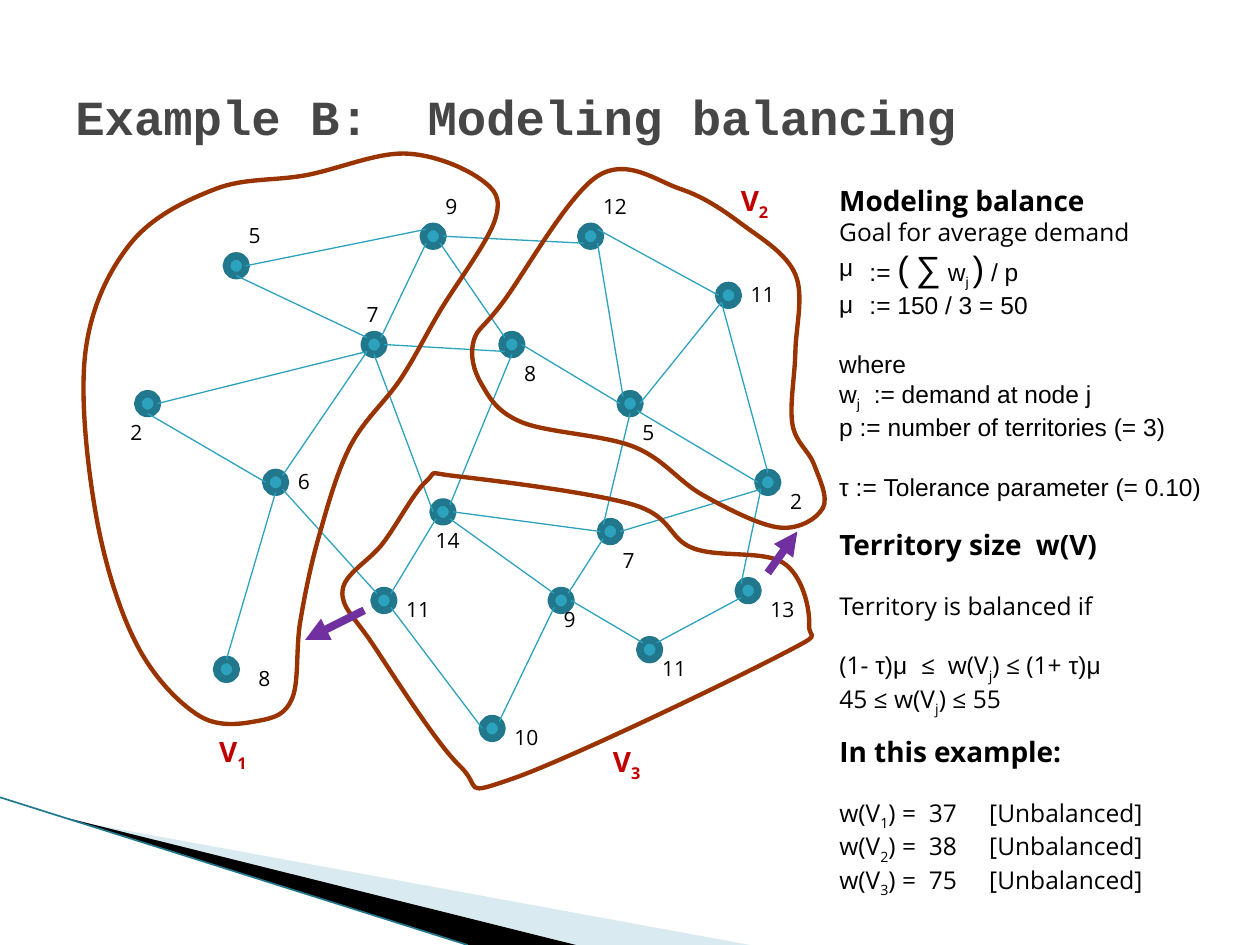
from typing import NamedTuple, Optional, Sequence

import lxml.etree
import pptx
import pptx.dml.color
import pptx.enum.shapes
import pptx.enum.text
import pptx.oxml.ns
import pptx.util

COLUMNS, ROWS = 128, 96
WIDTH, HEIGHT = pptx.util.Inches(10), pptx.util.Inches(7.5)
CELL = WIDTH / COLUMNS
COLORS = {
    "node": "2DA2BF", "ring": "21788D", "region": "993300", "name": "C00000",
    "arrow": "7030A0", "text": "000000", "title": "464646", "wash": "A0CBDC",
}
SANS, ARIAL, MONO = "Open Sans", "Arial", "Courier New"
DIAGONAL = 0.5 ** 0.5
SITES = {
    "N": (0, -1), "S": (0, 1), "W": (-1, 0), "E": (1, 0),
    "NW": (-DIAGONAL, -DIAGONAL), "NE": (DIAGONAL, -DIAGONAL),
    "SW": (-DIAGONAL, DIAGONAL), "SE": (DIAGONAL, DIAGONAL),
}
Point = tuple[float, float]


class Node(NamedTuple):
    center: Point
    demand: int
    label: Point


class Region(NamedTuple):
    number: str
    label: Point
    anchors: Sequence[Point]


class Span(NamedTuple):
    text: str
    font: str = SANS
    size: float = 14
    bold: bool = False
    sub: bool = False


class Para(NamedTuple):
    spans: Sequence[Span]
    before: float = 0
    bullet: str = ""
    tab: float = 0


NODES = {
    "A": Node((24, 27), 5, (24, 22)), "B": Node((15, 41), 2, (12, 42)),
    "C": Node((44, 24), 9, (44, 19)), "D": Node((28, 49), 6, (29, 47)),
    "E": Node((52, 35), 8, (52, 36)), "F": Node((38, 35), 7, (36, 30)),
    "G": Node((64, 41), 5, (64, 42)), "H": Node((39, 61), 11, (40, 60)),
    "I": Node((45, 52), 14, (43, 53)), "J": Node((62, 54), 7, (62, 55)),
    "K": Node((60, 24), 12, (60, 19)), "L": Node((78, 49), 2, (79, 49)),
    "M": Node((57, 61), 9, (56, 61)), "N": Node((76, 60), 13, (77, 60)),
    "O": Node((23, 68), 8, (25, 67)), "P": Node((66, 66), 11, (66, 66)),
    "Q": Node((50, 74), 10, (51, 73)), "R": Node((74, 30), 11, (75, 28)),
}
EDGES = """A.S-F.NW A.E-C.NW B.E-F.SW D.W-B.S O.N-D.S F.NE-C.SW D.NE-F.SW C.E-K.SW
C.SE-E.NW F.E-E.SW F.S-I.W H.NW-D.SE H.SE-Q.W H.NE-I.SW E.E-G.W K.SE-G.NW K.NE-R.W
G.E-R.SW G.S-J.NW I.E-J.W I.SE-M.NW Q.NE-M.SW M.E-P.NW P.NE-N.SW M.NE-J.SW N.NW-L.SW
L.N-R.SW G.SE-L.W J.E-L.SW I.NE-E.S""".split()
REGIONS = [
    Region("1", (21, 74), [
        (13.3, 24.7), (8.7, 35.6), (9.7, 52), (13.8, 65.3), (20.2, 72.7), (26.4, 73.2),
        (29.7, 70.9), (30.5, 63.2), (32.4, 54.5), (35.6, 45.3), (40.7, 38.5), (44.7, 31.6),
        (50.3, 22.3), (48.8, 18.2), (41.1, 15.6), (31.1, 17.8), (21.9, 19.2)]),
    Region("2", (74, 18), [
        (60.7, 17.9), (51.1, 30.7), (48.1, 34.7), (48.9, 39), (53, 42.9), (64.4, 45.4),
        (71.4, 50.3), (79.2, 53.6), (83.6, 51.6), (82.7, 47.2), (80.5, 43.1), (80.8, 35.7),
        (80.8, 27.9), (75.4, 22.8), (69.1, 19.2)]),
    Region("3", (61, 75), [
        (38.9, 55.2), (43.3, 48.9), (46.5, 48.4), (64.4, 51.3), (70.4, 55.7), (79.6, 57.2),
        (82.2, 63.5), (79, 66.7), (52.1, 79.1), (46.7, 77.8), (37.9, 65.5), (34.8, 60)]),
]


def heading(text: str) -> Para:
    return Para([Span(text, size=16, bold=True)])


def arial(text: str, **form) -> Span:
    return Span(text, ARIAL, **form)


BALANCE = [
    heading("Modeling balance"),
    Para([Span("Goal for average demand")]),
    Para([arial(":= "), arial("(", size=20), arial(" "), arial("∑", size=20), arial(" w"),
          arial("j ", sub=True), arial(")", size=20), arial(" / p")], bullet="μ"),
    Para([arial(":= 150 / 3 = 50")], bullet="μ"),
    Para([arial("where")], before=17),
    Para([arial("w"), arial("j", sub=True), arial("  := demand at node j")]),
    Para([arial("p := number of territories (= 3)")]),
    Para([arial("τ := Tolerance parameter (= 0.10)")], before=17),
]
TERRITORY = [
    heading("Territory size  w(V)"),
    Para([Span("Territory is balanced if")], before=17),
    Para([Span("(1-"), arial(" τ)μ  "), Span("≤  w(V"), Span("j", sub=True),
          Span(") ≤ (1+"), arial(" τ)μ")], before=17),
    Para([Span("45 "), Span("≤ w(V"), Span("j", sub=True), Span(") ≤ 55")]),
]
EXAMPLE = [heading("In this example:")] + [
    Para([Span("w(V"), Span(number, sub=True), Span(f") =  {size}\t[Unbalanced]")],
         before=0 if index else 17, tab=1.19)
    for index, (number, size) in enumerate([("1", 37), ("2", 38), ("3", 75)])
]


def grid(cells: float) -> int:
    return round(cells * CELL)


def rgb(name: str) -> pptx.dml.color.RGBColor:
    return pptx.dml.color.RGBColor.from_string(COLORS[name])


def child(parent, tag: str, **attributes: str):
    return lxml.etree.SubElement(parent, pptx.oxml.ns.qn(tag), attributes)


def add_text(page, paras: Sequence[Para], *, at: Point, size: Point,
             color: str = "text", wrap: bool = False, middle: bool = False) -> None:
    box = page.shapes.add_textbox(*map(grid, at + size))
    frame = box.text_frame
    frame.word_wrap = wrap
    if middle:
        frame.vertical_anchor = pptx.enum.text.MSO_ANCHOR.MIDDLE
    for index, item in enumerate(paras):
        para = frame.add_paragraph() if index else frame.paragraphs[0]
        if item.bullet:
            properties = para._p.get_or_add_pPr()
            properties.set("marL", str(pptx.util.Inches(0.24)))
            properties.set("indent", str(-pptx.util.Inches(0.24)))
            child(properties, "a:buFont", typeface=ARIAL)
            child(properties, "a:buChar", char=item.bullet)
        if item.tab:
            tabs = child(para._p.get_or_add_pPr(), "a:tabLst")
            child(tabs, "a:tab", pos=str(pptx.util.Inches(item.tab)), algn="l")
        if item.before:
            para.space_before = pptx.util.Pt(item.before)
        for part in item.spans:
            span = para.add_run()
            span.text = part.text
            span.font.name, span.font.size = part.font, pptx.util.Pt(part.size)
            span.font.bold = part.bold
            span.font.color.rgb = rgb(color)
            if part.sub:
                span.font._element.set("baseline", "-25000")


def add_line(page, start: Point, end: Point, color: str, width: float, arrow: bool = False) -> None:
    line = page.shapes.add_connector(
        pptx.enum.shapes.MSO_CONNECTOR.STRAIGHT, *map(grid, start + end))
    line.line.color.rgb = rgb(color)
    line.line.width = pptx.util.Pt(width)
    if arrow:
        child(line.line._get_or_add_ln(), "a:tailEnd", type="triangle")
    child(line._element.spPr, "a:effectLst")


def add_outline(page, points: Sequence[Point], *, fill: Optional[str] = None,
                line: Optional[str] = None, alpha: int = 100):
    corners = [(grid(x), grid(y)) for x, y in points]
    builder = page.shapes.build_freeform(*corners[0])
    builder.add_line_segments(corners[1:] + corners[:1], close=True)
    shape = builder.convert_to_shape()
    shape.shadow.inherit = False
    if fill:
        shape.fill.solid()
        shape.fill.fore_color.rgb = rgb(fill)
        paint = next(shape._element.iter(pptx.oxml.ns.qn("a:srgbClr")))
        child(paint, "a:alpha", val=str(alpha * 1000))
    else:
        shape.fill.background()
    if line:
        shape.line.color.rgb = rgb(line)
        shape.line.width = pptx.util.Pt(2.5)
    else:
        shape.line.fill.background()
    return shape


def add_region(page, region: Region) -> None:
    shape = add_outline(page, region.anchors, line="region")
    points, count = region.anchors, len(region.anchors)
    segments = list(shape._element.iter(pptx.oxml.ns.qn("a:lnTo")))
    for index, segment in enumerate(segments):
        before, start, end, after = (points[(index + step) % count] for step in (-1, 0, 1, 2))
        controls = [
            tuple(s + (e - b) / 6 for b, s, e in zip(before, start, end)),
            tuple(e - (a - s) / 6 for s, e, a in zip(start, end, after)), end]
        curve = lxml.etree.Element(pptx.oxml.ns.qn("a:cubicBezTo"))
        for x, y in controls:
            child(curve, "a:pt", x=str(grid(x) - shape.left), y=str(grid(y) - shape.top))
        segment.getparent().replace(segment, curve)
    name = [Span("V", size=16, bold=True), Span(region.number, size=16, bold=True, sub=True)]
    add_text(page, [Para(name)], at=region.label, size=(6, 5), color="name")


def add_node(page, node: Node) -> None:
    x, y = node.center
    dot = page.shapes.add_shape(
        pptx.enum.shapes.MSO_SHAPE.OVAL, grid(x - 1), grid(y - 1), grid(2), grid(2))
    dot.shadow.inherit = False
    dot.fill.solid()
    dot.fill.fore_color.rgb = rgb("node")
    dot.line.color.rgb = rgb("ring")
    dot.line.width = pptx.util.Pt(4.33)


def rim(end: str) -> Point:
    name, site = end.split(".")
    (x, y), (across, down) = NODES[name].center, SITES[site]
    return x + across, y + down


def main() -> None:
    deck = pptx.Presentation()
    deck.slide_width, deck.slide_height = WIDTH, HEIGHT
    page = deck.slides.add_slide(deck.slide_layouts[6])
    add_outline(page, [(7, 83.3), (76.2, ROWS), (58.4, ROWS)], fill="wash", alpha=40)
    add_outline(page, [(6.8, 83.1), (58.5, ROWS), (47.6, ROWS)], fill="text")
    add_line(page, (0, 81), (47.5, ROWS), "ring", 0.95)
    add_text(page, [Para([Span("Example B:  Modeling balancing", MONO, 28, True)])],
             at=(6.4, 3.8), size=(115.2, 16), color="title", wrap=True, middle=True)
    for node in NODES.values():
        add_node(page, node)
    for edge in EDGES:
        start, end = edge.split("-")
        add_line(page, rim(start), rim(end), "node", 0.75)
    for node in NODES.values():
        demand = str(node.demand)
        add_text(page, [Para([Span(demand, size=12)])], at=node.label,
                 size=(2 + 2 * len(demand), 4))
    for region in REGIONS:
        add_region(page, region)
    for paras, row, size in ((BALANCE, 18, (40, 33)), (TERRITORY, 53, (39, 20)),
                             (EXAMPLE, 74, (39, 17))):
        add_text(page, paras, at=(84, row), size=size, wrap=True)
    add_line(page, (37, 62), (31, 65), "arrow", 4.5, arrow=True)
    add_line(page, (78, 58.2), (81, 54), "arrow", 4.5, arrow=True)
    deck.save("out.pptx")


if __name__ == "__main__":
    main()
